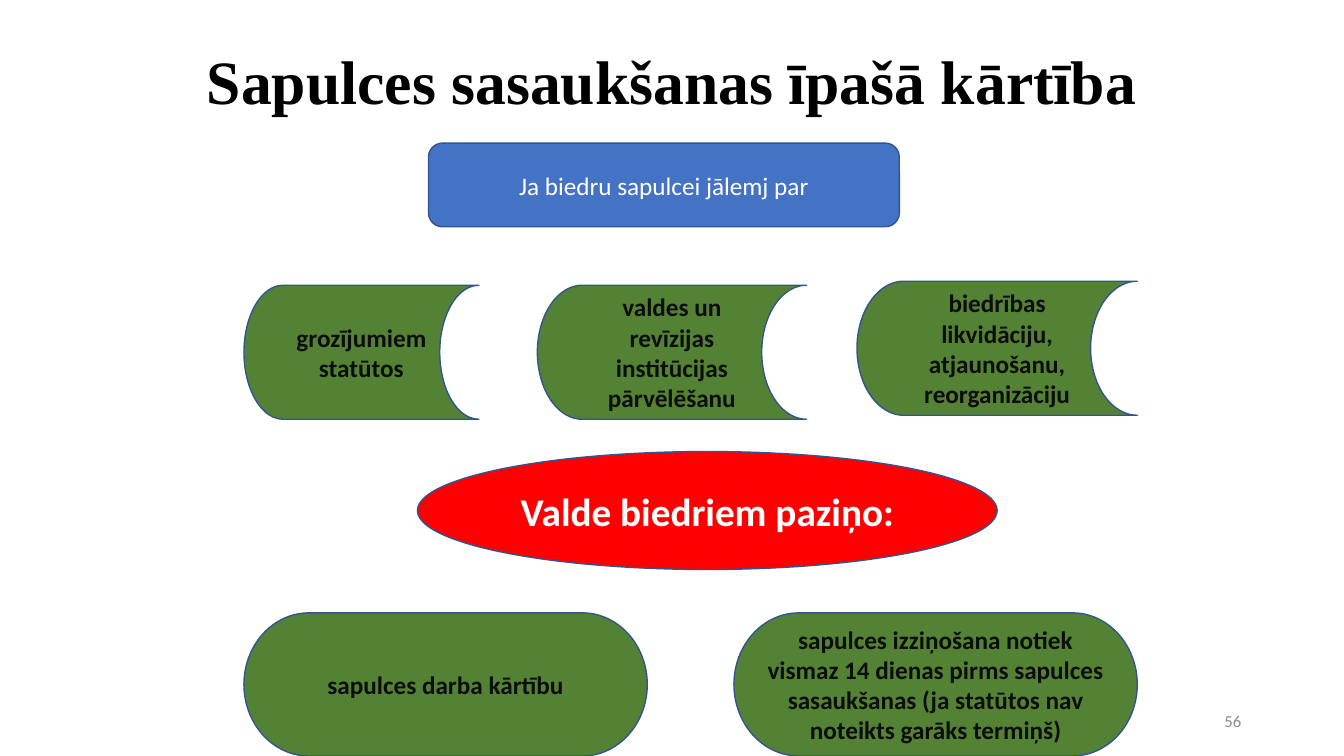
"""Build the slide on the special procedure for convening a members' meeting."""
from dataclasses import dataclass

from pptx import Presentation
from pptx.dml.color import RGBColor
from pptx.enum.shapes import MSO_SHAPE as Shape
from pptx.enum.text import MSO_ANCHOR as Anchor, PP_ALIGN as Align
from pptx.util import Inches, Pt

TITLE = "Sapulces sasaukšanas īpašā kārtība"
PAGE_NUMBER = "56"
CONDITION = "Ja biedru sapulcei jālemj par"
DECISIONS = [
    ("grozījumiem statūtos", 2.42, 2.83, 2.33),
    ("valdes un revīzijas institūcijas pārvēlēšanu", 5.33, 2.83, 2.67),
    ("biedrības likvidāciju, atjaunošanu, reorganizāciju", 8.5, 2.79, 2.78),
]
ANNOUNCEMENT = "Valde biedriem paziņo:"
NOTICES = [
    "sapulces darba kārtību",
    "sapulces izziņošana notiek vismaz 14 dienas pirms sapulces "
    "sasaukšanas (ja statūtos nav noteikts garāks termiņš)",
]

SLIDE_WIDTH, SLIDE_HEIGHT = 13.33, 7.5
LEFT, RIGHT = 2.42, 11.28
MARGIN = 0.92
DECISION_HEIGHT = 1.33
NOTICE_WIDTH, NOTICE_HEIGHT = 4, 1.42


@dataclass(frozen=True)
class Theme:
    """Colours, fonts and type sizes."""
    blue: str = "4472C4"
    green: str = "548235"
    red: str = "FF0000"
    outline: str = "325491"
    black: str = "000000"
    ink: str = "0D0D0D"
    white: str = "FFFFFF"
    grey: str = "8C8C8C"
    heading_font: str = "Times New Roman"
    body_font: str = "Calibri"
    heading: int = 44
    callout: int = 28
    body: int = 18
    small: int = 12


THEME = Theme()


def write(shape, text, size, colour, bold=False, font=THEME.body_font, align=Align.CENTER):
    """Put one formatted paragraph in a shape and return the paragraph."""
    frame = shape.text_frame
    frame.text = text
    frame.word_wrap = True
    frame.vertical_anchor = Anchor.MIDDLE
    paragraph = frame.paragraphs[0]
    paragraph.alignment = align
    for run in paragraph.runs:
        run.font.name = font
        run.font.size = Pt(size)
        run.font.bold = bold
        run.font.color.rgb = RGBColor.from_string(colour)
    return paragraph


def add_label(slide, box, text, *style, **options):
    """Add a plain text box."""
    label = slide.shapes.add_textbox(*map(Inches, box))
    return write(label, text, *style, **options)


def add_block(slide, kind, box, fill, text, size=THEME.body, colour=THEME.ink, bold=True):
    """Add a filled, outlined shape with centred text."""
    block = slide.shapes.add_shape(kind, *map(Inches, box))
    block.shadow.inherit = False
    block.fill.solid()
    block.fill.fore_color.rgb = RGBColor.from_string(fill)
    block.line.color.rgb = RGBColor.from_string(THEME.outline)
    block.line.width = Pt(1)
    write(block, text, size, colour, bold)


def main():
    """Lay out the slide and save it."""
    deck = Presentation()
    deck.slide_width, deck.slide_height = Inches(SLIDE_WIDTH), Inches(SLIDE_HEIGHT)
    slide = deck.slides.add_slide(deck.slide_layouts[6])

    heading = add_label(slide, (MARGIN, 0.4, SLIDE_WIDTH - 2 * MARGIN, 0.87), TITLE,
                        THEME.heading, THEME.black, bold=True, font=THEME.heading_font)
    heading.line_spacing = 0.9
    add_label(slide, (SLIDE_WIDTH - MARGIN - 3, 6.95, 3, 0.4), PAGE_NUMBER,
              THEME.small, THEME.grey, align=Align.RIGHT)

    add_block(slide, Shape.ROUNDED_RECTANGLE, (4.25, 1.42, 4.67, 0.83), THEME.blue,
              CONDITION, colour=THEME.white, bold=False)
    for text, left, top, width in DECISIONS:
        add_block(slide, Shape.FLOWCHART_STORED_DATA, (left, top, width, DECISION_HEIGHT),
                  THEME.green, text)
    add_block(slide, Shape.FLOWCHART_CONNECTOR, (4.14, 4.48, 5.75, 1.17), THEME.red,
              ANNOUNCEMENT, THEME.callout, THEME.white)

    step = (RIGHT - LEFT - NOTICE_WIDTH) / (len(NOTICES) - 1)
    for column, text in enumerate(NOTICES):
        box = (LEFT + column * step, SLIDE_HEIGHT - NOTICE_HEIGHT, NOTICE_WIDTH, NOTICE_HEIGHT)
        add_block(slide, Shape.FLOWCHART_TERMINATOR, box, THEME.green, text)

    deck.save("out.pptx")


if __name__ == "__main__":
    main()
